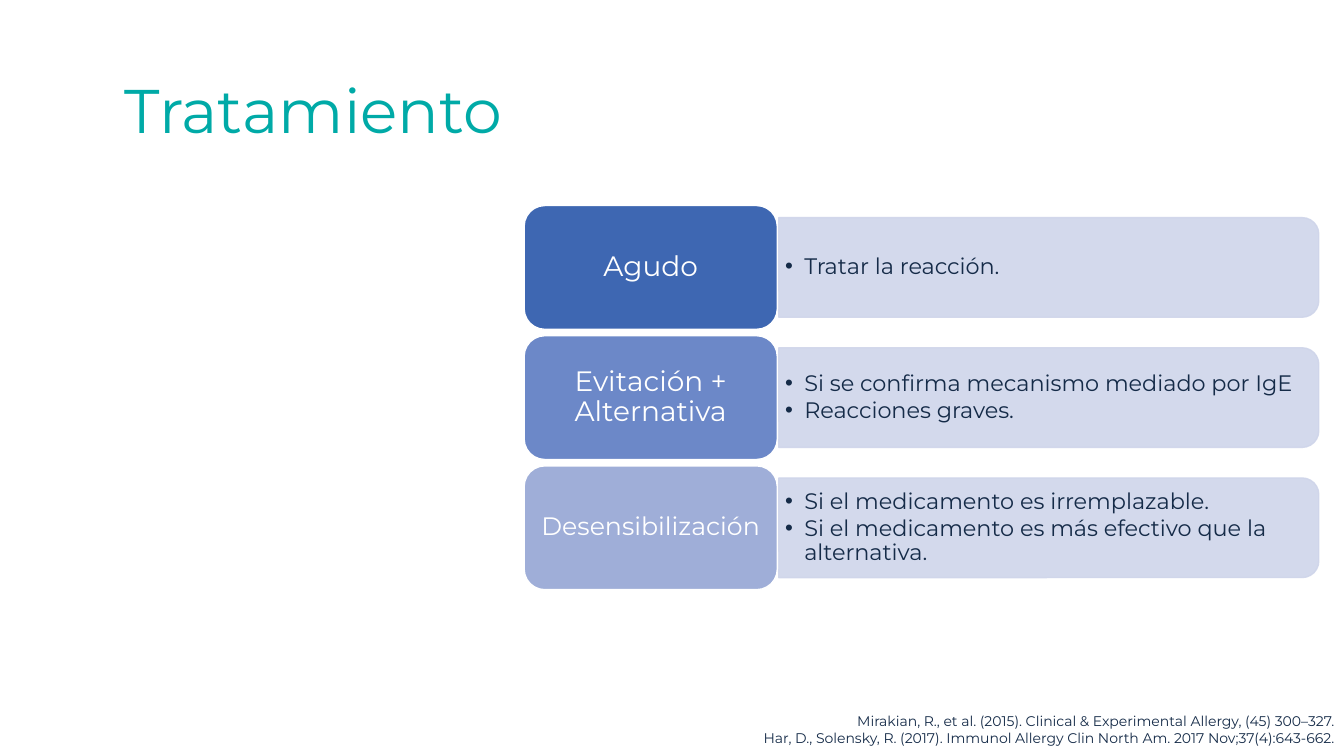
from lxml import etree
from pptx import Presentation
from pptx.dml.color import RGBColor
from pptx.enum.shapes import MSO_SHAPE
from pptx.enum.text import MSO_ANCHOR, PP_ALIGN
from pptx.oxml.ns import qn
from pptx.util import Cm, Pt

ROUNDED = MSO_SHAPE.ROUNDED_RECTANGLE
ROUNDED_SIDE = MSO_SHAPE.ROUND_2_SAME_RECTANGLE
MIDDLE, TOP = MSO_ANCHOR.MIDDLE, MSO_ANCHOR.TOP
LEFT, CENTER, RIGHT = PP_ALIGN.LEFT, PP_ALIGN.CENTER, PP_ALIGN.RIGHT

FONT = "Montserrat"
COLORS = {
    "title": "00AAA7",
    "text": "152B48",
    "white": "FFFFFF",
    "panel": "CFD5EA",
    "acute": "3E67B2",
    "avoidance": "6C88C8",
    "desensitization": "9FAED8",
}
TREATMENTS = [
    ("Agudo", 20, "acute", ["Tratar la reacción."]),
    ("Evitación + Alternativa", 20, "avoidance",
     ["Si se confirma mecanismo mediado por IgE", "Reacciones graves."]),
    ("Desensibilización", 18, "desensitization",
     ["Si el medicamento es irremplazable.",
      "Si el medicamento es más efectivo que la alternativa."]),
]
REFERENCES = [
    "Mirakian, R., et al. (2015). Clinical & Experimental Allergy, (45) 300–327.",
    "Har, D., Solensky, R. (2017). Immunol Allergy Clin North Am. 2017 Nov;37(4):643-662.",
]
FIRST_ROW_CENTER, ROW_PITCH = 6.74, 3.28


def rgb(name):
    return RGBColor.from_string(COLORS[name])


def apply_values(target, values):
    for name, value in values.items():
        setattr(target, name, value)


def add_bullet(paragraph):
    properties = paragraph._p.get_or_add_pPr()
    properties.set("marL", str(Cm(0.48)))
    properties.set("indent", str(-Cm(0.48)))
    etree.SubElement(properties, qn("a:buFont")).set("typeface", "Arial")
    etree.SubElement(properties, qn("a:buChar")).set("char", "•")


def write_text(shape, lines, size, color, align, anchor=MIDDLE,
               margins=(0.25, 0.13), spacing=0.9, bullets=False):
    frame = shape.text_frame
    horizontal, vertical = map(Cm, margins)
    apply_values(frame, {
        "word_wrap": True, "vertical_anchor": anchor,
        "margin_left": horizontal, "margin_right": horizontal,
        "margin_top": vertical, "margin_bottom": vertical,
    })
    for index, line in enumerate(lines):
        paragraph = frame.add_paragraph() if index else frame.paragraphs[0]
        paragraph.text = line
        if bullets:
            add_bullet(paragraph)
            apply_values(paragraph, {"level": 1, "space_after": Pt(2.4)})
        apply_values(paragraph, {"alignment": align, "line_spacing": spacing})
        apply_values(paragraph.font, {"name": FONT, "size": Pt(size)})
        paragraph.font.color.rgb = rgb(color)


def add_text(slide, box, *text, **options):
    write_text(slide.shapes.add_textbox(*map(Cm, box)), *text, **options)


def add_block(slide, kind, box, fill, line):
    shape = slide.shapes.add_shape(kind, *map(Cm, box))
    shape.shadow.inherit = False
    shape.fill.solid()
    shape.fill.fore_color.rgb = rgb(fill)
    shape.line.color.rgb = rgb(line)
    shape.line.width = Pt(1)
    return shape


def add_panel(slide, center):
    width, height = 2.51, 13.61
    box = (26.43 - width / 2, center - height / 2, width, height)
    panel = add_block(slide, ROUNDED_SIDE, box, "panel", "panel")
    panel.rotation = 90
    for color in panel.element.iter(qn("a:srgbClr")):
        etree.SubElement(color, qn("a:alpha")).set("val", "90000")


def add_treatment(slide, center, label, size, fill, points):
    add_panel(slide, center)
    add_text(slide, (19.61, center - 1.13, 13.51, 2.26), points, 16, "text", LEFT,
             margins=(0.18, 0.08), bullets=True)
    block = add_block(slide, ROUNDED, (13.21, center - 1.56, 6.38, 3.12), fill, "white")
    write_text(block, [label], size, "white", CENTER, margins=(0.18, 0.1))


def main():
    """Build the treatment slide and save it."""
    presentation = Presentation()
    apply_values(presentation, {"slide_width": Cm(33.87), "slide_height": Cm(19.05)})
    slide = presentation.slides.add_slide(presentation.slide_layouts[6])
    add_text(slide, (2.34, 1.02, 11.13, 3.68), ["Tratamiento"], 44, "title", CENTER)
    for index, treatment in enumerate(TREATMENTS):
        add_treatment(slide, FIRST_ROW_CENTER + index * ROW_PITCH, *treatment)
    add_text(slide, (0, 17.83, 33.87, 1.12), REFERENCES, 10, "text", RIGHT,
             anchor=TOP, spacing=1.0)
    presentation.save("out.pptx")


if __name__ == "__main__":
    main()
